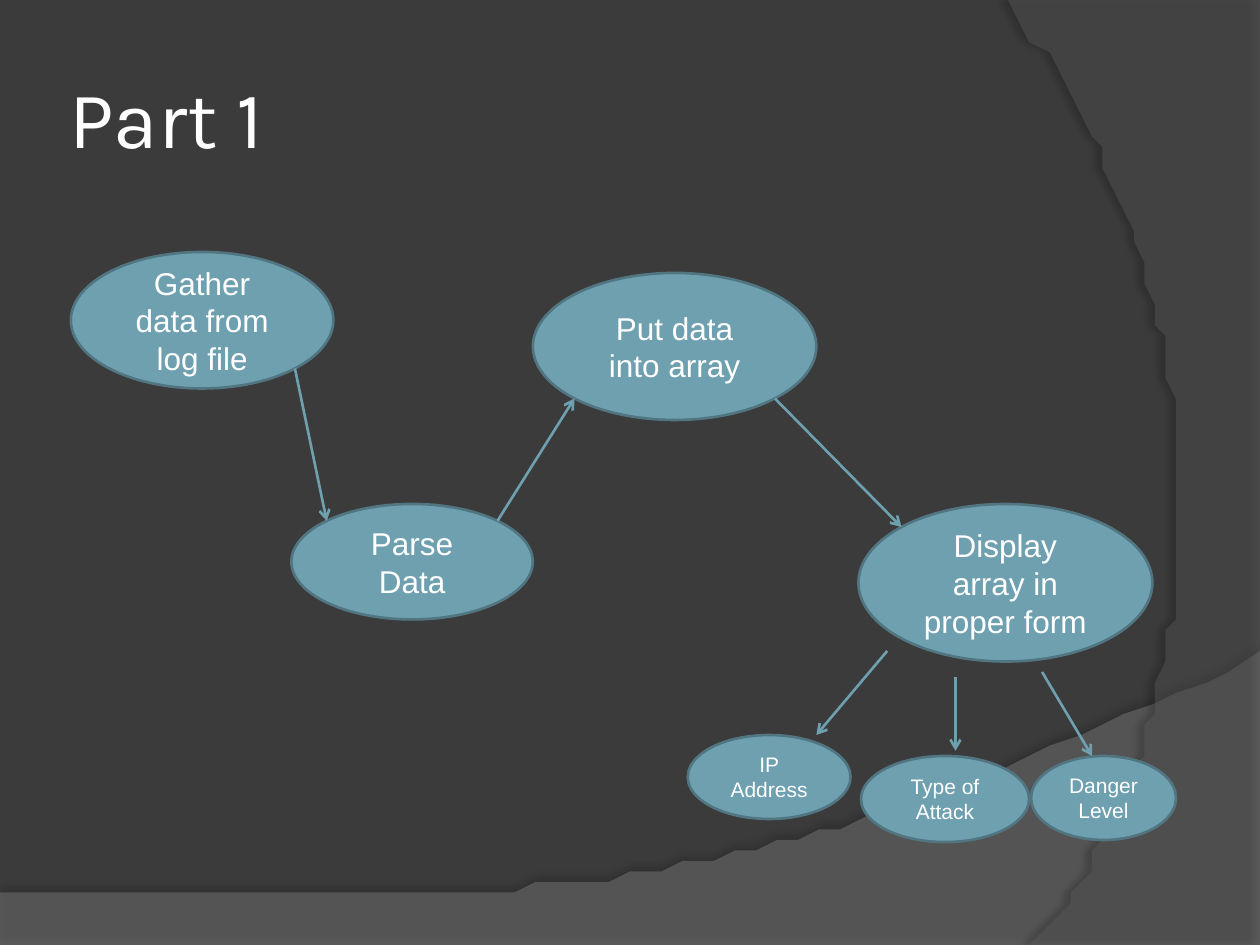
from math import sqrt

from lxml import etree
from pptx import Presentation
from pptx.dml.color import RGBColor
from pptx.enum.shapes import MSO_CONNECTOR, MSO_SHAPE
from pptx.enum.text import MSO_ANCHOR, PP_ALIGN
from pptx.oxml.ns import qn
from pptx.util import Inches, Pt

STRAIGHT, OVAL = MSO_CONNECTOR.STRAIGHT, MSO_SHAPE.OVAL
MIDDLE, LEFT, CENTER = MSO_ANCHOR.MIDDLE, PP_ALIGN.LEFT, PP_ALIGN.CENTER

DARK = RGBColor(0x3B, 0x3B, 0x3B)
WAVE = RGBColor(0x7F, 0x7F, 0x7F)
ARC = RGBColor(0x5E, 0x5E, 0x5E)
TEAL = RGBColor(0x6E, 0xA0, 0xB0)
TEAL_DARK = RGBColor(0x51, 0x76, 0x82)
WHITE = RGBColor(0xFF, 0xFF, 0xFF)

CELL = Inches(1) / 12  # the slide is a grid of 120 columns by 90 rows
COLS, ROWS = 120, 90


def grid(*values):
    return [round(v * CELL) for v in values]


def bezier(a, b, c, d, steps=60):
    """Points along a cubic curve."""
    points = []
    for i in range(steps + 1):
        t = i / steps
        weights = ((1 - t) ** 3, 3 * t * (1 - t) ** 2, 3 * t * t * (1 - t), t ** 3)
        points.append(tuple(sum(w * p[k] for w, p in zip(weights, (a, b, c, d)))
                            for k in (0, 1)))
    return points


def corner(sp, dx, dy):
    """Grid point on an ellipse, diagonally from its centre."""
    x = sp.left + sp.width / 2 * (1 + dx / sqrt(2))
    y = sp.top + sp.height / 2 * (1 + dy / sqrt(2))
    return x / CELL, y / CELL


class FlowSlide:
    font, title_font = "Arial", "Karla"
    line_width = Pt(1.5)

    def __init__(self, prs):
        self.s = prs.slides.add_slide(prs.slide_layouts[5])
        fill = self.s.background.fill
        fill.solid()
        fill.fore_color.rgb = DARK

    def label(self, sp, text, size, font, align):
        tf = sp.text_frame
        tf.text = text
        tf.word_wrap = True
        tf.vertical_anchor = MIDDLE
        p = tf.paragraphs[0]
        p.alignment = align
        r = p.runs[0]
        r.font.size, r.font.name = Pt(size), font
        r.font.color.rgb = WHITE

    def title(self, text, *box):
        sp = self.s.shapes.title
        sp.left, sp.top, sp.width, sp.height = grid(*box)
        self.label(sp, text, 46, self.title_font, LEFT)
        tf = sp.text_frame
        tf.margin_left = tf.margin_right = Inches(0.05)
        tf.margin_top = tf.margin_bottom = Inches(0.05)

    def backdrop(self, points, color, opacity, shade, distance, angle):
        start, *rest = points
        builder = self.s.shapes.build_freeform(*start, scale=CELL)
        builder.add_line_segments(rest, close=True)
        sp = builder.convert_to_shape()
        sp.line.fill.background()
        sp.fill.solid()
        sp.fill.fore_color.rgb = color
        sp.shadow.inherit = False
        props = sp.element.spPr
        clr = props.find(qn("a:solidFill")).find(qn("a:srgbClr"))
        etree.SubElement(clr, qn("a:alpha"), val=str(opacity * 1000))
        shadow = etree.SubElement(
            props.find(qn("a:effectLst")), qn("a:outerShdw"), blurRad=str(Pt(4)),
            dist=str(Pt(distance)), dir=str(angle * 60000), rotWithShape="0")
        black = etree.SubElement(shadow, qn("a:srgbClr"), val="000000")
        etree.SubElement(black, qn("a:alpha"), val=str(shade * 1000))

    def bubble(self, text, box, size):
        sp = self.s.shapes.add_shape(OVAL, *grid(*box))
        sp.shadow.inherit = False
        sp.fill.solid()
        sp.fill.fore_color.rgb = TEAL
        sp.line.color.rgb = TEAL_DARK
        sp.line.width = self.line_width
        self.label(sp, text, size, self.font, CENTER)
        return sp

    def arrow(self, start, end):
        cxn = self.s.shapes.add_connector(STRAIGHT, *grid(*start, *end))
        cxn.line.color.rgb = TEAL
        cxn.line.width = self.line_width
        props = cxn.element.spPr
        etree.SubElement(props.find(qn("a:ln")), qn("a:tailEnd"), type="arrow")
        etree.SubElement(props, qn("a:effectLst"))


def main():
    prs = Presentation()
    prs.slide_width, prs.slide_height = grid(COLS, ROWS)
    flow = FlowSlide(prs)

    # Curved backdrop
    wave = bezier((COLS, 62.4), (67.08, 87.48), (46.92, 86.28), (0, 84.6))
    flow.backdrop([(0, ROWS), (COLS, ROWS)] + wave, WAVE, 45, 35, 3.5, 270)
    arc = bezier((98.5, ROWS), (112.2, 74.28), (122.16, 36), (96, 0))
    flow.backdrop([(COLS, 0.24), (COLS, ROWS)] + arc, ARC, 40, 45, 4, 180)

    flow.title("Part 1", 6, 3.6, 98, 15)

    # Main steps
    gather = flow.bubble("Gather data from log file", (6.75, 24, 25, 13), 18)
    parsing = flow.bubble("Parse Data", (27.75, 48, 23, 11), 18)
    put = flow.bubble("Put data into array", (50.75, 26, 27, 14), 18)
    display = flow.bubble("Display array in proper form", (81.75, 48, 28, 15), 18)

    flow.arrow(corner(gather, 1, 1), corner(parsing, -1, -1))
    flow.arrow(corner(parsing, 1, -1), corner(put, -1, 1))
    flow.arrow(corner(put, 1, 1), corner(display, -1, -1))

    # Displayed fields, each with the arrow that leads to it
    fields = [
        ("IP Address", (65.5, 70, 15.5, 8), (84.5, 62), (77.75, 70)),
        ("Type of Attack", (82, 72, 16, 8.2), (91, 64.5), (91, 71.5)),
        ("Danger Level", (98.2, 72, 13.8, 8), (99.25, 64), (104, 72)),
    ]
    for text, box, start, end in fields:
        flow.bubble(text, box, 12)
        flow.arrow(start, end)

    prs.save("out.pptx")


if __name__ == "__main__":
    main()
